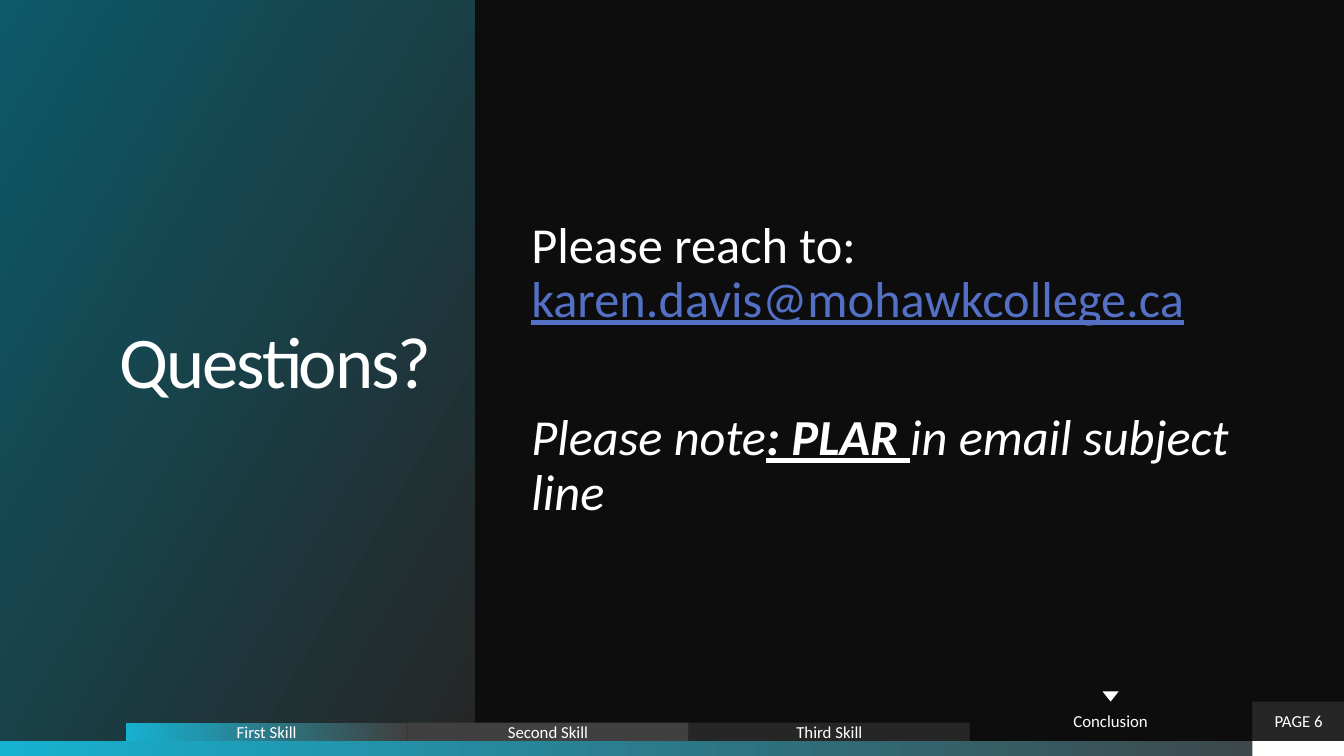
from pptx import Presentation, util as u
from pptx.dml.color import RGBColor
from pptx.enum import shapes, text

WHITE, BLACK, DARK, GREY, CYAN = "FFFFFF", "0D0D0D", "262626", "404040", "17B2D1"

presentation = Presentation()
presentation.slide_width, presentation.slide_height = u.Inches(13.33), u.Inches(7.5)
slide = presentation.slides.add_slide(presentation.slide_layouts[6])
slide.background.fill.solid()
slide.background.fill.fore_color.rgb = RGBColor.from_string(BLACK)


def add_block(box, *colours, angle=0, kind=shapes.MSO_SHAPE.RECTANGLE):
    """Preset shape with a solid fill (one colour) or a gradient (two colours)."""
    shape = slide.shapes.add_shape(kind, *map(u.Inches, box))
    shape.shadow.inherit = False
    shape.line.fill.background()
    if len(colours) == 1:
        shape.fill.solid()
        shape.fill.fore_color.rgb = RGBColor.from_string(colours[0])
    else:
        shape.fill.gradient()
        shape.fill.gradient_angle = angle
        for stop, colour in zip(shape.fill.gradient_stops, colours):
            stop.color.rgb = RGBColor.from_string(colour)
    return shape


def write(shape, *paragraphs, size=12, align=text.PP_ALIGN.CENTER, inset=(0, 0),
          line=1.0, gap=0, tracking=0):
    """Fill a shape with paragraphs, each a list of (text, font settings) runs."""
    frame = shape.text_frame
    frame.word_wrap = True
    frame.vertical_anchor = text.MSO_ANCHOR.MIDDLE
    frame.margin_left = frame.margin_right = u.Inches(inset[0])
    frame.margin_top = frame.margin_bottom = u.Inches(inset[1])
    for index, runs in enumerate(paragraphs):
        paragraph = frame.add_paragraph() if index else frame.paragraphs[0]
        paragraph.alignment = align
        paragraph.line_spacing = line
        paragraph.space_before = u.Pt(gap if index else 0)
        for words, style in runs:
            run = paragraph.add_run()
            run.text = words
            run.font.name, run.font.size = "Calibri", u.Pt(size)
            run.font.color.rgb = RGBColor.from_string(style.get("colour", WHITE))
            run.font.bold = style.get("bold", False)
            run.font.italic = style.get("italic", False)
            run.font.underline = style.get("underline", False)
            if tracking:
                run._r.get_or_add_rPr().set("spc", str(int(tracking * 100)))


# Grid: bottom strip, tab row and page column
floor, strip = 7.35, 0.15
tab_left, tab_width, tab_height = 1.25, 2.79, 0.18
tall_height = 0.39
page_left, page_width = 12.42, 0.92

# Bottom strip
add_block((0, floor, 13.33, strip), CYAN, GREY)
add_block((page_left, floor, page_width, strip), WHITE)

# Title panel
title = add_block((0, 0, 4.71, floor), DARK, "0C5968", angle=150)
write(title, [("Questions?", {})], size=52, align=text.PP_ALIGN.RIGHT,
      inset=(0.43, 0), line=0.7, tracking=-1.5)

# Contact details
body = slide.shapes.add_textbox(*map(u.Inches, (5.15, 0.4, 7.27, 6.55)))
write(body,
      [("Please reach to: ", {}),
       ("karen.davis@mohawkcollege.ca", {"colour": "5370C5", "underline": True})],
      [("Please note", {"italic": True}),
       (": PLAR ", {"italic": True, "bold": True, "underline": True}),
       ("in email subject line", {"italic": True})],
      size=36, align=text.PP_ALIGN.LEFT, inset=(0.12, 0.12), line=0.9, gap=59.5)

# Page number
page = add_block((page_left, floor - tall_height, page_width, tall_height), DARK)
write(page, [("PAGE 6", {})])

# Section tabs, the current one taller
tabs = [("First Skill", tab_height, (CYAN, GREY)), ("Second Skill", tab_height, (GREY,)),
        ("Third Skill", tab_height, (DARK,)), ("Conclusion", tall_height, (BLACK,))]
for column, (label, height, colours) in enumerate(tabs):
    left = tab_left + column * tab_width
    tab = add_block((left, floor - height, tab_width, height), *colours)
    write(tab, [(label, {})])

# Marker above the current tab
marker = add_block((left + tab_width / 2 - 0.08, 6.86, 0.16, 0.1), WHITE,
                   kind=shapes.MSO_SHAPE.ISOSCELES_TRIANGLE)
marker.rotation = 180

presentation.save("out.pptx")
